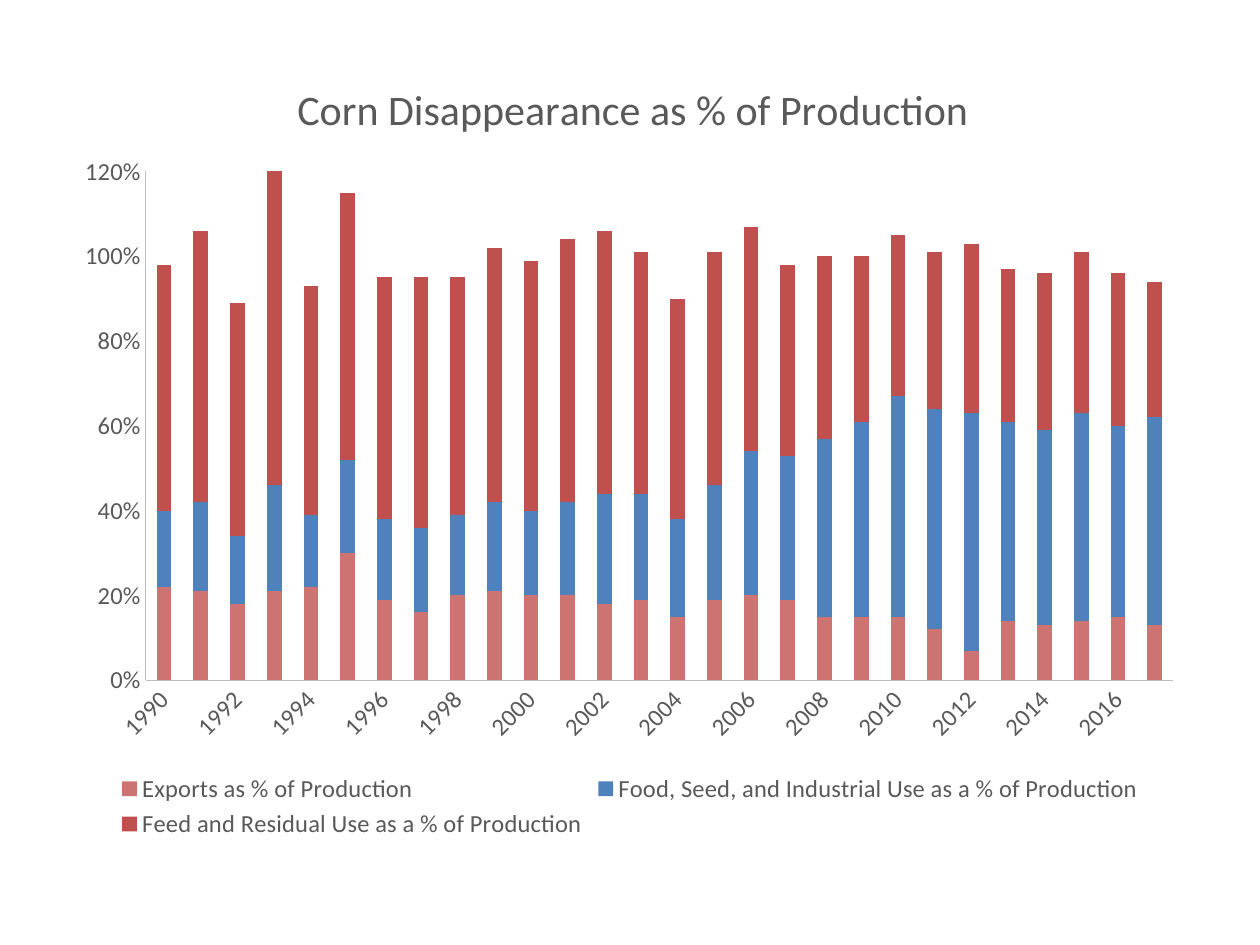
from lxml import etree
from pptx import Presentation
from pptx.chart.data import CategoryChartData
from pptx.dml.color import RGBColor
from pptx.enum.chart import XL_CHART_TYPE, XL_LEGEND_POSITION, XL_TICK_MARK
from pptx.oxml import parse_xml
from pptx.oxml.ns import nsdecls, qn
from pptx.util import Inches, Pt

GRAY = RGBColor(0x59, 0x59, 0x59)
AXIS_GRAY = RGBColor(0xBF, 0xBF, 0xBF)
ROSE = RGBColor(0xCD, 0x73, 0x71)
BLUE = RGBColor(0x4F, 0x81, 0xBD)
RED = RGBColor(0xC0, 0x50, 0x4D)

SERIES = [
    ("Exports as % of Production", ROSE,
     [22, 21, 18, 21, 22, 30, 19, 16, 20, 21, 20, 20, 18, 19,
      15, 19, 20, 19, 15, 15, 15, 12, 7, 14, 13, 14, 15, 13]),
    ("Food, Seed, and Industrial Use as a % of Production", BLUE,
     [18, 21, 16, 25, 17, 22, 19, 20, 19, 21, 20, 22, 26, 25,
      23, 27, 34, 34, 42, 46, 52, 52, 56, 47, 46, 49, 45, 49]),
    ("Feed and Residual Use as a % of Production", RED,
     [58, 64, 55, 74, 54, 63, 57, 59, 56, 60, 59, 62, 62, 57,
      52, 55, 53, 45, 43, 39, 38, 37, 40, 36, 37, 38, 36, 32]),
]


def style_font(font, size, color=GRAY):
    font.name = "Calibri"
    font.size = Pt(size)
    font.bold = False
    font.color.rgb = color


def make_layout(target="", **box):
    """Manual chart layout; box values are fractions of the chart."""
    modes = "".join(f'<c:{k}Mode val="edge"/>' for k in "xy")
    sizes = "".join(f'<c:{k} val="{v}"/>' for k, v in box.items())
    return parse_xml(f'<c:layout {nsdecls("c")}><c:manualLayout>{target}{modes}'
                     f'{sizes}</c:manualLayout></c:layout>')


prs = Presentation()
prs.slide_width, prs.slide_height = Inches(10), Inches(7.5)
s = prs.slides.add_slide(prs.slide_layouts[6])

# Stacked column chart
data = CategoryChartData(number_format="0%")
data.categories = [str(year) for year in range(1990, 2018)]
for name, _, percents in SERIES:
    data.add_series(name, [v / 100 for v in percents])
chart = s.shapes.add_chart(XL_CHART_TYPE.COLUMN_STACKED, Inches(0.5), Inches(0.33),
                           Inches(9), Inches(6.37), data).chart
style_font(chart.font, 10, RGBColor(0, 0, 0))
plot = chart.plots[0]
plot.gap_width, plot.overlap = 150, 100
plot.vary_by_categories = False
for series, (_, color, _) in zip(plot.series, SERIES):
    series.format.fill.solid()
    series.format.fill.fore_color.rgb = color

# Title
chart.has_title = True
title = chart.chart_title
title.include_in_layout = False
p = title.text_frame.paragraphs[0]
r = p.add_run()
r.text = "Corn Disappearance as % of Production"
style_font(r.font, 24)
title_xml = chart.element.find(".//" + qn("c:title"))
for old in title_xml.findall(qn("c:layout")):
    title_xml.remove(old)
title_xml.find(qn("c:tx")).addnext(make_layout(x=0.2, y=0.04))

# Axes
for axis in (chart.category_axis, chart.value_axis):
    axis.has_major_gridlines = False
    axis.major_tick_mark = axis.minor_tick_mark = XL_TICK_MARK.NONE
    axis.format.line.color.rgb = AXIS_GRAY
    axis.format.line.width = Pt(0.75)
    style_font(axis.tick_labels.font, 14)
chart.value_axis.minimum_scale = 0
chart.value_axis.maximum_scale = 1.2
chart.value_axis.major_unit = 0.2
chart.value_axis.tick_labels.number_format = "0%"
chart.value_axis.tick_labels.number_format_is_linked = False

# Slanted labels, every second year
cat_xml = chart.element.find(".//" + qn("c:catAx"))
cat_xml.find(qn("c:txPr")).find(qn("a:bodyPr")).set("rot", "-2700000")
skip = etree.Element(qn("c:tickLblSkip"), val="2")
cat_xml.find(qn("c:noMultiLvlLbl")).addprevious(skip)

# Plot area
area = chart.element.find(".//" + qn("c:plotArea"))
for old in area.findall(qn("c:layout")):
    area.remove(old)
area.insert(0, make_layout('<c:layoutTarget val="inner"/>',
                           x=0.073, y=0.162, w=0.906, h=0.634))

# Legend
chart.has_legend = True
chart.legend.position = XL_LEGEND_POSITION.BOTTOM
chart.legend.include_in_layout = False
style_font(chart.legend.font, 14)

prs.save("out.pptx")
